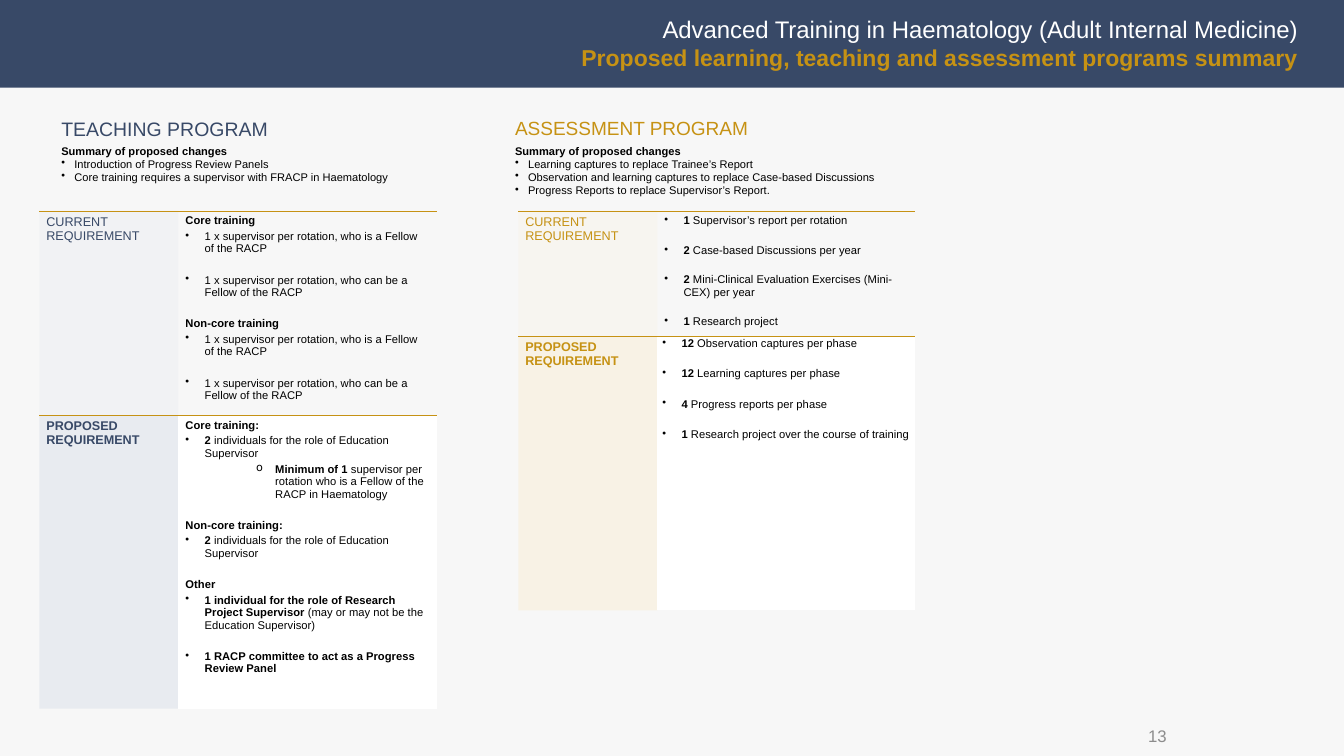
from dataclasses import dataclass

from lxml.etree import SubElement
from pptx import Presentation
from pptx.dml.color import RGBColor
from pptx.enum.shapes import MSO_SHAPE
from pptx.enum.text import MSO_ANCHOR, PP_ALIGN
from pptx.oxml import parse_xml
from pptx.oxml.ns import nsdecls, qn
from pptx.slide import Slide
from pptx.table import _Cell
from pptx.text.text import TextFrame, _Paragraph
from pptx.util import Inches, Pt


@dataclass(frozen=True)
class Theme:
    font: str = "Arial"
    navy: str = "384967"
    gold: str = "C69214"
    pale_navy: str = "D2D9E6"
    pale_gold: str = "FAECCA"
    backdrop: str = "F7F7F7"
    white: str = "FFFFFF"
    black: str = "000000"
    grey: str = "8C8C8C"
    title: float = 17.1
    subtitle: float = 16.4
    page: float = 12
    label: float = 9
    body: float = 8
    summary: float = 7.9


THEME = Theme()
NO_STYLE = "{2D5ABB26-0587-4C30-8999-92F81FD0307C}"
GAP = 13.2  # space after an item that closes a group, in points


@dataclass(frozen=True)
class Line:
    """One paragraph; text between asterisks is bold."""
    text: str
    bullet: str = ""
    indent: float = 0.19
    hang: float = 0.19
    before: float = 0
    after: float = 0
    spacing: float = 1.0


@dataclass(frozen=True)
class Requirement:
    label: str
    height: float
    alpha: int
    lines: list[Line]
    fill: str = ""
    margins: tuple[float, float] = (0.07, 0.04)


@dataclass(frozen=True)
class Program:
    heading: str
    heading_size: float
    color: str
    tint: str
    text_left: float
    table_left: float
    summary_width: float
    changes: list[str]
    requirements: list[Requirement]


def head(text: str) -> Line:
    return Line(f"*{text}*", after=2)


def item(text: str, after: float = 2) -> Line:
    return Line(text, "•", after=after)


def spaced(texts: list[str], spacing: float = 1.0) -> list[Line]:
    return [Line(text, "•", before=6 if i else 0, after=6, spacing=spacing)
            for i, text in enumerate(texts)]


FELLOW = "1 x supervisor per rotation, who is a Fellow of the RACP"
MAYBE_FELLOW = "1 x supervisor per rotation, who can be a Fellow of the RACP"
EDUCATION = "*2* individuals for the role of Education Supervisor"

PROGRAMS = [
    Program("TEACHING PROGRAM", 13.9, THEME.navy, THEME.pale_navy, 0.51, 0.39, 3.82, [
        "Introduction of Progress Review Panels",
        "Core training requires a supervisor with FRACP in Haematology",
    ], [
        Requirement("CURRENT REQUIREMENT", 2.03, 15, [
            head("Core training"), item(FELLOW, GAP), item(MAYBE_FELLOW, GAP),
            head("Non-core training"), item(FELLOW, GAP), item(MAYBE_FELLOW),
        ]),
        Requirement("*PROPOSED REQUIREMENT*", 2.91, 40, [
            head("Core training:"), item(EDUCATION),
            Line("*Minimum of 1 *supervisor per rotation who is a Fellow of the "
                 "RACP in Haematology", "o", indent=0.89, after=GAP),
            head("Non-core training:"), item(EDUCATION, GAP),
            head("Other"),
            item("*1 individual for the role of Research Project Supervisor* "
                 "(may or may not be the Education Supervisor)", GAP),
            item("*1 RACP committee to act as a Progress Review Panel*"),
        ], THEME.white),
    ]),
    Program("ASSESSMENT PROGRAM", 13.6, THEME.gold, THEME.pale_gold, 5.01, 5.14, 5.2, [
        "Learning captures to replace Trainee’s Report",
        "Observation and learning captures to replace Case-based Discussions",
        "Progress Reports to replace Supervisor’s Report.",
    ], [
        Requirement("CURRENT REQUIREMENT", 1.23, 15, spaced([
            "*1* Supervisor’s report per rotation",
            "*2* Case-based Discussions per year",
            "*2* Mini-Clinical Evaluation Exercises (Mini-CEX) per year",
            "*1* Research project",
        ])),
        Requirement("*PROPOSED REQUIREMENT*", 2.72, 40, spaced([
            "*12 *Observation captures per phase",
            "*12* Learning captures per phase",
            "*4* Progress reports per phase",
            "*1* Research project over the course of training",
        ], 1.07), THEME.white, (0.05, 0)),
    ]),
]


def add_run(paragraph: _Paragraph, text: str, size: float, color: str, bold: bool) -> None:
    run = paragraph.add_run()
    run.text = text
    for name, value in {"name": THEME.font, "size": Pt(size), "bold": bold}.items():
        setattr(run.font, name, value)
    run.font.color.rgb = RGBColor.from_string(color)


def write(frame: TextFrame, lines: list[Line], size: float, color: str) -> None:
    for i, line in enumerate(lines):
        paragraph = frame.paragraphs[0] if i == 0 else frame.add_paragraph()
        if line.bullet:
            props = paragraph._p.get_or_add_pPr()
            props.set("marL", str(Inches(line.indent)))
            props.set("indent", str(-Inches(line.hang)))
            SubElement(props, qn("a:buChar")).set("char", line.bullet)
        formats = {"space_before": Pt(line.before), "space_after": Pt(line.after),
                   "line_spacing": line.spacing}
        for name, value in formats.items():
            setattr(paragraph, name, value)
        for j, part in enumerate(line.text.split("*")):
            if part:
                add_run(paragraph, part, size, color, j % 2 == 1)


def add_text(slide: Slide, left: float, top: float, width: float, height: float) -> TextFrame:
    frame = slide.shapes.add_textbox(*map(Inches, (left, top, width, height))).text_frame
    frame.word_wrap = True
    return frame


def style_cell(cell: _Cell, fill: str, alpha: int, margins: tuple[float, float]) -> None:
    side, end = map(Inches, margins)
    for name, value in {"margin_left": side, "margin_right": side,
                        "margin_top": end, "margin_bottom": end}.items():
        setattr(cell, name, value)
    if fill:
        cell.fill.solid()
        cell.fill.fore_color.rgb = RGBColor.from_string(fill)
    else:
        cell.fill.background()
    props = cell._tc.get_or_add_tcPr()
    if alpha < 100:
        SubElement(props.find(f".//{qn('a:srgbClr')}"), qn("a:alpha")).set("val", str(alpha * 1000))
    props.insert(0, parse_xml(
        f'<a:lnT {nsdecls("a")} w="{Pt(0.25)}"><a:solidFill><a:srgbClr val="{THEME.gold}"/>'
        "</a:solidFill></a:lnT>"))


def add_program(slide: Slide, program: Program) -> None:
    # Heading and summary of changes
    write(add_text(slide, program.text_left, 1.11, 3.06, 0.34),
          [Line(program.heading)], program.heading_size, program.color)
    changes = [Line(change, "•", indent=0.13, hang=0.13) for change in program.changes]
    write(add_text(slide, program.text_left, 1.38, program.summary_width, 0.5),
          [Line("*Summary of proposed changes*"), *changes], THEME.summary, THEME.black)

    # Requirements table
    rows = program.requirements
    height = sum(row.height for row in rows)
    table = slide.shapes.add_table(
        len(rows), 2, *map(Inches, (program.table_left, 2.09, 3.94, height))).table
    table.first_row = table.horz_banding = False
    table._tbl.tblPr.find(qn("a:tableStyleId")).text = NO_STYLE
    for column, width in zip(table.columns, (1.38, 2.56)):
        column.width = Inches(width)
    for i, row in enumerate(rows):
        table.rows[i].height = Inches(row.height)
        label, details = table.cell(i, 0), table.cell(i, 1)
        style_cell(label, program.tint, row.alpha, (0.07, 0.04))
        style_cell(details, row.fill, 100, row.margins)
        write(label.text_frame, [Line(row.label)], THEME.label, program.color)
        write(details.text_frame, row.lines, THEME.body, THEME.black)


def main() -> None:
    deck = Presentation()
    deck.slide_width, deck.slide_height = Inches(13.33), Inches(7.5)
    slide = deck.slides.add_slide(deck.slide_layouts[6])
    slide.background.fill.solid()
    slide.background.fill.fore_color.rgb = RGBColor.from_string(THEME.backdrop)

    for program in PROGRAMS:
        add_program(slide, program)

    # Title banner
    banner = slide.shapes.add_shape(MSO_SHAPE.RECTANGLE, 0, 0, deck.slide_width, Inches(0.87))
    banner.shadow.inherit = False
    banner.fill.solid()
    banner.fill.fore_color.rgb = RGBColor.from_string(THEME.navy)
    banner.line.fill.background()
    title = add_text(slide, 5.12, 0.1, 7.85, 0.67).paragraphs[0]
    title.alignment = PP_ALIGN.RIGHT
    add_run(title, "Advanced Training in Haematology (Adult Internal Medicine)",
            THEME.title, THEME.white, False)
    title.add_line_break()
    add_run(title, "Proposed learning, teaching and assessment programs summary",
            THEME.subtitle, THEME.gold, True)

    # Page number
    page = add_text(slide, 9.42, 7.1, 2.25, 0.4)
    page.vertical_anchor = MSO_ANCHOR.MIDDLE
    write(page, [Line("13")], THEME.page, THEME.grey)
    page.paragraphs[0].alignment = PP_ALIGN.RIGHT

    deck.save("out.pptx")


if __name__ == "__main__":
    main()
